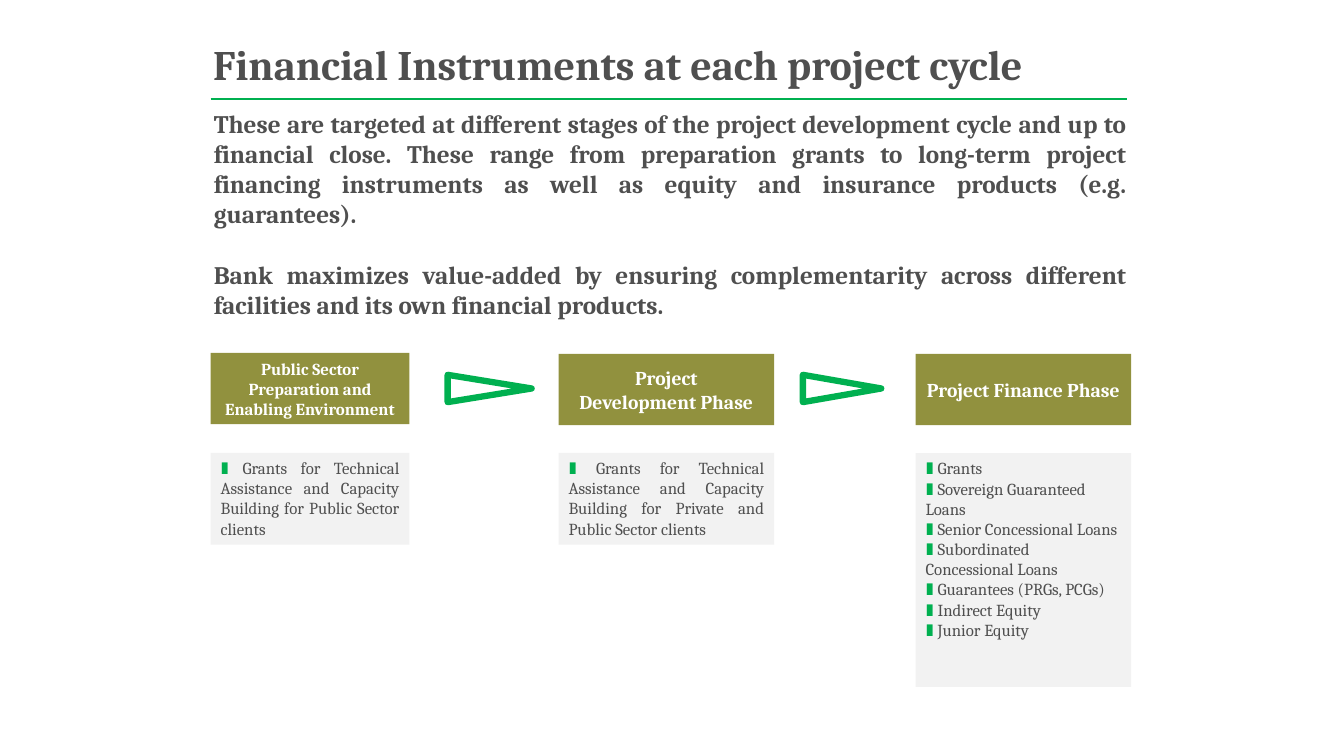
from dataclasses import dataclass

from lxml import etree
from pptx import Presentation
from pptx.dml.color import RGBColor
from pptx.enum import shapes, text
from pptx.oxml import ns
from pptx.util import Pt

GREEN = RGBColor(0x00, 0xB0, 0x50)
OLIVE = RGBColor(0x91, 0x91, 0x3E)
GREY = RGBColor(0x4F, 0x4F, 0x4F)
PALE = RGBColor(0xF2, 0xF2, 0xF2)
WHITE = RGBColor(0xFF, 0xFF, 0xFF)
LEFT = text.PP_ALIGN.LEFT
CENTER = text.PP_ALIGN.CENTER
JUSTIFY = text.PP_ALIGN.JUSTIFY
TOP = text.MSO_ANCHOR.TOP
MIDDLE = text.MSO_ANCHOR.MIDDLE


@dataclass
class Phase:
    left: float
    width: float
    head_top: float
    head: list[str]
    head_size: float
    list_top: float
    list_height: float
    items: list[str]
    align: int


@dataclass
class Arrow:
    center_x: float
    length: float


PHASES = [
    Phase(150.5, 142, 252, ["Public Sector", "Preparation and", "Enabling Environment"], 12,
          323.5, 65.5,
          ["Grants for Technical Assistance and Capacity Building for Public Sector clients"],
          JUSTIFY),
    Phase(399, 154, 252.75, ["Project", "Development Phase"], 14, 323.5, 65.5,
          ["Grants for Technical Assistance and Capacity Building for Private and "
           "Public Sector clients"], JUSTIFY),
    Phase(654, 154, 252.75, ["Project Finance Phase"], 14, 323.75, 167,
          ["Grants", "Sovereign Guaranteed Loans", "Senior Concessional Loans",
           "Subordinated Concessional Loans", "Guarantees (PRGs, PCGs)",
           "Indirect Equity", "Junior Equity"], LEFT),
]
ARROWS = [Arrow(349.75, 60), Arrow(601.5, 56)]
ARROW_Y = 277.5
ARROW_WIDTH = 19.5
HEAD_HEIGHT = 51
INTRO = [
    "These are targeted at different stages of the project development cycle and up to "
    "financial close. These range from preparation grants to long-term project financing "
    "instruments as well as equity and insurance products (e.g. guarantees).",
    "Bank maximizes value-added by ensuring complementarity across different facilities "
    "and its own financial products.",
]


def place(sp, left: float, top: float, width: float, height: float) -> None:
    sp.left, sp.top, sp.width, sp.height = Pt(left), Pt(top), Pt(width), Pt(height)


def write(sp, lines: list[str], *, size: float, color: RGBColor, bold: bool = False,
          align: int = LEFT, anchor: int = TOP, gap: float = 0, marker: str = "") -> None:
    tf = sp.text_frame
    tf.word_wrap = True
    tf.auto_size = text.MSO_AUTO_SIZE.NONE
    tf.vertical_anchor = anchor
    for i, line in enumerate(lines):
        p = tf.paragraphs[0] if i == 0 else tf.add_paragraph()
        pPr = p._p.get_or_add_pPr()
        pPr.set("marL", "0")
        pPr.set("indent", "0")
        etree.SubElement(pPr, ns.qn("a:buNone"))
        p.alignment = align
        p.space_before = Pt(gap if i else 0)
        for content, tint in ((marker, GREEN), (line, color)):
            if content:
                r = p.add_run()
                r.text = content
                r.font.name = "Cambria"
                r.font.size = Pt(size)
                r.font.bold = bold
                r.font.color.rgb = tint


def add_box(s, kind: int, left: float, top: float, width: float, height: float,
            fill: RGBColor):
    sp = s.shapes.add_shape(kind, Pt(left), Pt(top), Pt(width), Pt(height))
    sp.shadow.inherit = False
    sp.fill.solid()
    sp.fill.fore_color.rgb = fill
    sp.line.fill.background()
    return sp


def add_phase(s, phase: Phase) -> None:
    rect = shapes.MSO_SHAPE.RECTANGLE
    sp = add_box(s, rect, phase.left, phase.head_top, phase.width, HEAD_HEIGHT, OLIVE)
    write(sp, phase.head, size=phase.head_size, color=WHITE, bold=True,
          align=CENTER, anchor=MIDDLE)
    sp = add_box(s, rect, phase.left, phase.list_top, phase.width, phase.list_height, PALE)
    write(sp, phase.items, size=12, color=GREY, align=phase.align, marker="∎ ")


def add_arrow(s, arrow: Arrow) -> None:
    sp = add_box(s, shapes.MSO_SHAPE.ISOSCELES_TRIANGLE, arrow.center_x - ARROW_WIDTH / 2,
                 ARROW_Y - arrow.length / 2, ARROW_WIDTH, arrow.length, WHITE)
    sp.rotation = 90
    sp.line.color.rgb = GREEN
    sp.line.width = Pt(4.5)


def add_rule(s, left: float, right: float, y: float) -> None:
    sp = s.shapes.add_connector(shapes.MSO_CONNECTOR.STRAIGHT,
                                Pt(left), Pt(y), Pt(right), Pt(y))
    sp.line.color.rgb = GREEN
    sp.line.width = Pt(2)
    etree.SubElement(sp._element.spPr, ns.qn("a:effectLst"))


def main() -> None:
    prs = Presentation()
    prs.slide_width, prs.slide_height = Pt(960), Pt(540)
    s = prs.slides.add_slide(prs.slide_layouts[1])
    title, body = s.shapes.title, s.placeholders[1]
    place(title, 145, 24, 666, 44)
    write(title, ["Financial Instruments at each project cycle"], size=30,
          color=GREY, bold=True)
    add_rule(s, 150.5, 805, 70.75)
    place(body, 145.5, 73.5, 666.5, 160)
    write(body, INTRO, size=18, color=GREY, bold=True, align=JUSTIFY, gap=21.5)
    for phase in PHASES:
        add_phase(s, phase)
    for arrow in ARROWS:
        add_arrow(s, arrow)
    prs.save("out.pptx")


if __name__ == "__main__":
    main()
